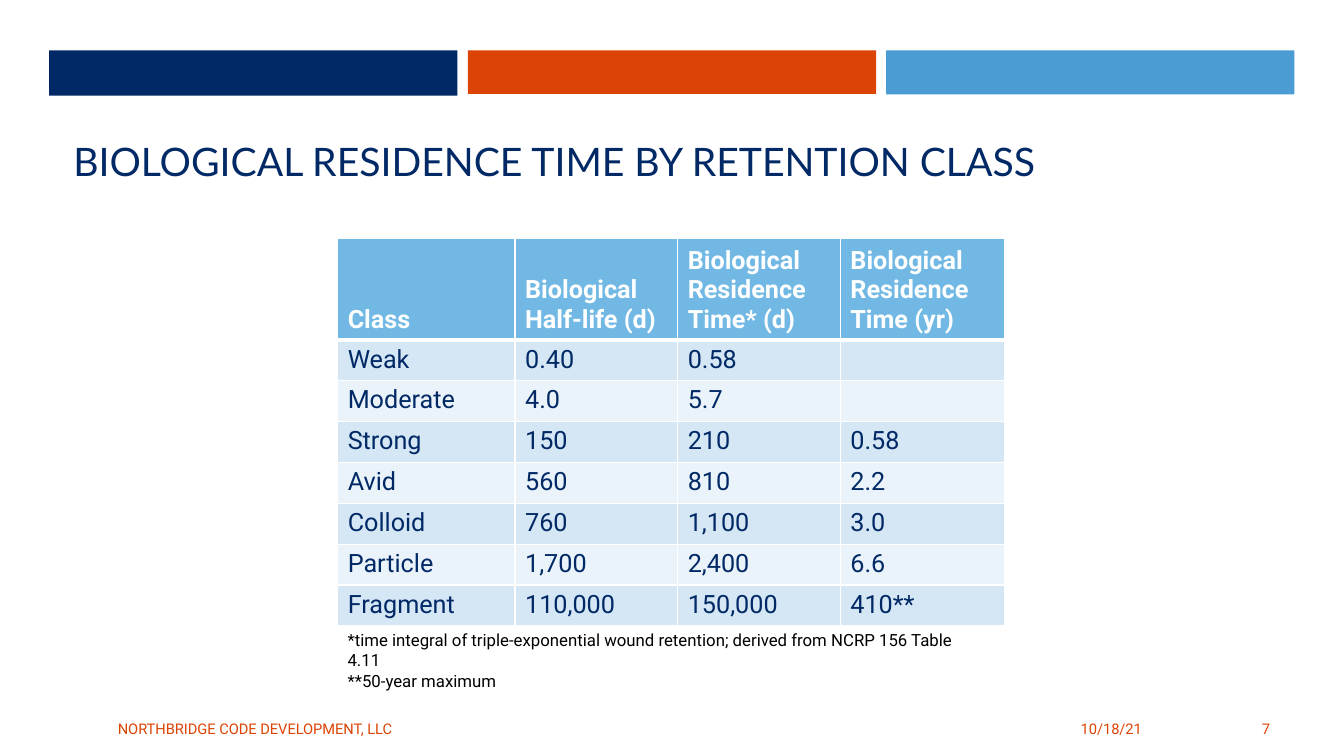
from dataclasses import dataclass

from lxml import etree
from pptx import Presentation
from pptx import util as u
from pptx.dml.color import RGBColor
from pptx.enum import shapes, text
from pptx.oxml import ns

COLORS = {
    "navy": "002966",
    "orange": "DC4405",
    "sky": "4B9CD3",
    "header": "71B9E4",
    "odd": "D5E6F5",
    "even": "EBF3FA",
    "white": "FFFFFF",
    "black": "000000",
}


@dataclass
class Band:
    left: float
    height: float
    color: str


@dataclass
class Label:
    words: str
    left: float
    top: float
    width: float
    height: float
    size: float
    color: str
    font: str = "Roboto"
    align: text.PP_ALIGN = text.PP_ALIGN.LEFT
    anchor: text.MSO_ANCHOR = text.MSO_ANCHOR.MIDDLE


BANDS = [
    Band(1.24, 1.14, "navy"),
    Band(22.33, 1.11, "sky"),
    Band(11.79, 1.1, "orange"),
]

LABELS = [
    Label("BIOLOGICAL RESIDENCE TIME BY RETENTION CLASS", 1.6, 2.03, 30.63, 2.74,
          28, "navy", font="Lato", anchor=text.MSO_ANCHOR.BOTTOM),
    Label("10/18/21", 21.13, 17.86, 7.9, 1.01, 10.5, "orange", align=text.PP_ALIGN.RIGHT),
    Label("NORTHBRIDGE CODE DEVELOPMENT, LLC", 2.72, 17.86, 18.11, 1.01, 10.5, "orange"),
    Label("7", 29.34, 17.86, 2.92, 1.01, 10.5, "orange", align=text.PP_ALIGN.RIGHT),
    Label("*time integral of triple-exponential wound retention; "
          "derived from NCRP 156 Table 4.11\n**50-year maximum",
          8.51, 15.75, 16.23, 1.73, 12, "black", anchor=text.MSO_ANCHOR.TOP),
]

RETENTION = [
    ("Class", "Biological Half-life (d)", "Biological\nResidence Time* (d)",
     "Biological\nResidence\nTime (yr)"),
    ("Weak", "0.40", "0.58", ""),
    ("Moderate", "4.0", "5.7", ""),
    ("Strong", "150", "210", "0.58"),
    ("Avid", "560", "810", "2.2"),
    ("Colloid", "760", "1,100", "3.0"),
    ("Particle", "1,700", "2,400", "6.6"),
    ("Fragment", "110,000", "150,000", "410**"),
]
COLUMN_WIDTHS = (4.47, 4.1, 4.1, 4.14)
HEADER_HEIGHT, CLASS_HEIGHT = 2.45, 1.03


def rgb(color: str) -> RGBColor:
    return RGBColor.from_string(COLORS[color])


def write_text(frame, words: str, *, size: float, color: str, font: str = "Roboto",
               bold: bool = False, align: text.PP_ALIGN = text.PP_ALIGN.LEFT) -> None:
    for index, line in enumerate(words.split("\n")):
        paragraph = frame.add_paragraph() if index else frame.paragraphs[0]
        paragraph.alignment = align
        if line:
            run = paragraph.add_run()
            run.text = line
            run.font.size = u.Pt(size)
            run.font.name = font
            run.font.bold = bold
            run.font.color.rgb = rgb(color)


def draw_band(slide, band: Band) -> None:
    bar = slide.shapes.add_shape(shapes.MSO_SHAPE.RECTANGLE, u.Cm(band.left), u.Cm(1.27),
                                 u.Cm(10.29), u.Cm(band.height))
    bar.shadow.inherit = False
    bar.fill.solid()
    bar.fill.fore_color.rgb = rgb(band.color)
    bar.line.fill.background()


def draw_label(slide, label: Label) -> None:
    box = slide.shapes.add_textbox(u.Cm(label.left), u.Cm(label.top),
                                   u.Cm(label.width), u.Cm(label.height))
    box.text_frame.word_wrap = True
    box.text_frame.vertical_anchor = label.anchor
    write_text(box.text_frame, label.words, align=label.align, size=label.size,
               color=label.color, font=label.font)


def draw_borders(cell, top: float, bottom: float) -> None:
    properties = cell._tc.get_or_add_tcPr()
    for side, width in (("L", 1), ("R", 1), ("T", top), ("B", bottom)):
        line = etree.SubElement(properties, ns.qn(f"a:ln{side}"), w=str(u.Pt(width)))
        fill = etree.SubElement(line, ns.qn("a:solidFill"))
        etree.SubElement(fill, ns.qn("a:srgbClr"), val=COLORS["white"])


def draw_retention(slide) -> None:
    height = HEADER_HEIGHT + CLASS_HEIGHT * (len(RETENTION) - 1)
    table = slide.shapes.add_table(len(RETENTION), len(COLUMN_WIDTHS), u.Cm(8.51), u.Cm(6.02),
                                   u.Cm(sum(COLUMN_WIDTHS)), u.Cm(height)).table
    for column, width in zip(table.columns, COLUMN_WIDTHS):
        column.width = u.Cm(width)
    for index, (row, entries) in enumerate(zip(table.rows, RETENTION)):
        is_header = index == 0
        row.height = u.Cm(HEADER_HEIGHT if is_header else CLASS_HEIGHT)
        shade = "header" if is_header else "odd" if index % 2 else "even"
        for cell, entry in zip(row.cells, entries):
            draw_borders(cell, top=3 if index == 1 else 1, bottom=3 if is_header else 1)
            cell.fill.solid()
            cell.fill.fore_color.rgb = rgb(shade)
            if is_header:
                cell.vertical_anchor = text.MSO_ANCHOR.BOTTOM
            write_text(cell.text_frame, entry, size=18, bold=is_header,
                       color="white" if is_header else "navy")


def main() -> None:
    deck = Presentation()
    deck.slide_width, deck.slide_height = u.Cm(33.87), u.Cm(19.05)
    slide = deck.slides.add_slide(deck.slide_layouts[6])
    for band in BANDS:
        draw_band(slide, band)
    for label in LABELS:
        draw_label(slide, label)
    draw_retention(slide)
    deck.save("out.pptx")


if __name__ == "__main__":
    main()
